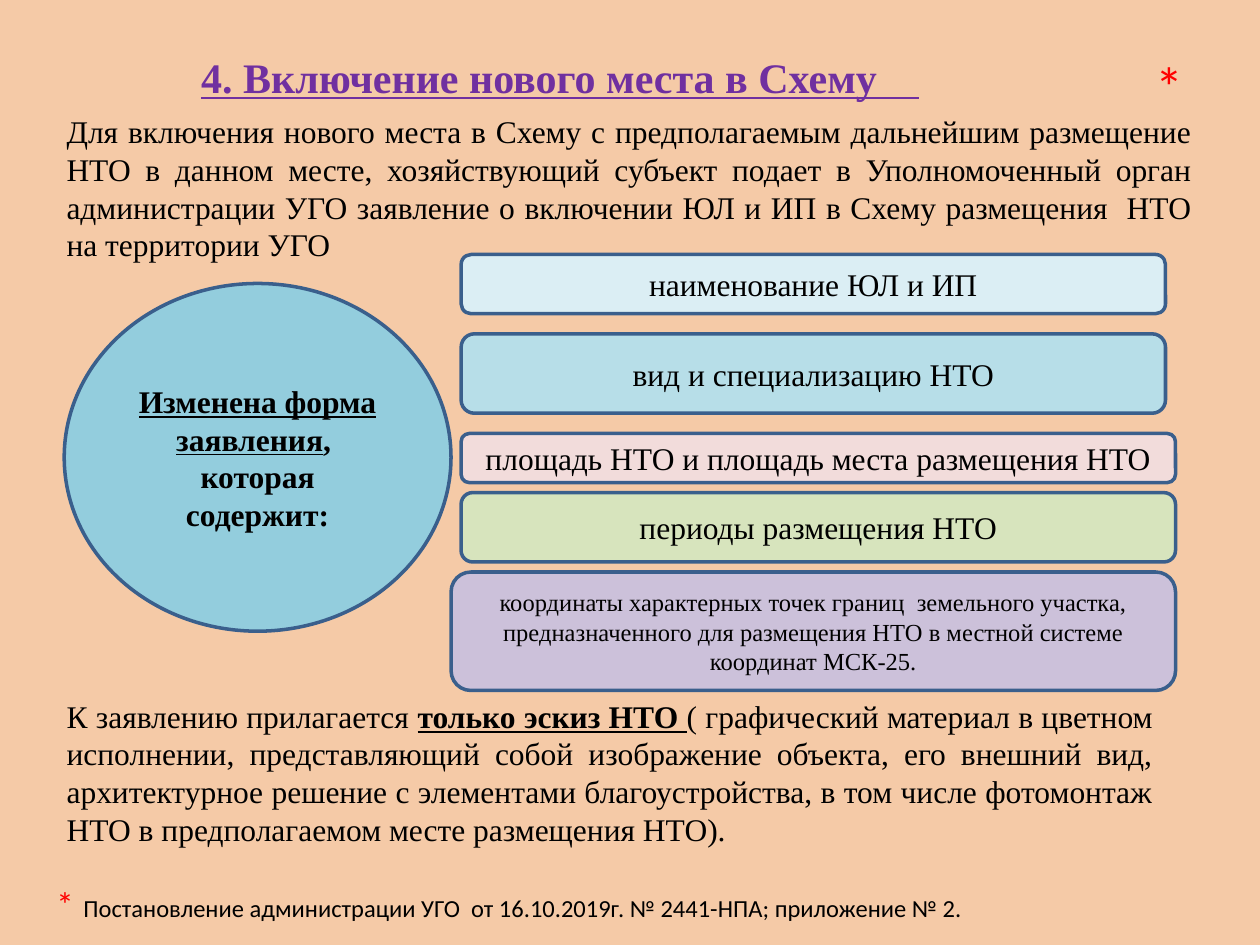
from dataclasses import dataclass

from pptx import Presentation
from pptx.dml.color import RGBColor
from pptx.enum.shapes import MSO_SHAPE
from pptx.enum.text import MSO_ANCHOR, PP_ALIGN
from pptx.util import Inches, Pt

COLORS = {
    "background": "F5CAA7", "title": "7030A0", "text": "000000",
    "star": "FF0000", "outline": "3A5F8C", "circle": "93CDDD",
    "name": "DBEEF4", "kind": "B7DEE8", "area": "F2DCDB",
    "period": "D7E4BD", "coordinates": "CCC1DA",
}
SERIF = "Times New Roman"
SANS = "Calibri"


@dataclass
class Span:
    text: str
    bold: bool = False
    underline: bool = False
    size: float | None = None
    color: str | None = None


@dataclass
class Style:
    size: float = 18
    font: str = SERIF
    color: str = "text"
    align: PP_ALIGN = PP_ALIGN.CENTER
    anchor: MSO_ANCHOR = MSO_ANCHOR.MIDDLE


@dataclass
class Item:
    text: str
    left: float
    top: float
    width: float
    height: float
    fill: str
    size: float = 18


def rgb(name: str) -> RGBColor:
    return RGBColor.from_string(COLORS[name])


def write(shape, paragraphs: list[list[Span]], style: Style) -> None:
    frame = shape.text_frame
    frame.word_wrap = True
    frame.vertical_anchor = style.anchor
    for index, spans in enumerate(paragraphs):
        para = frame.add_paragraph() if index else frame.paragraphs[0]
        para.alignment = style.align
        para.font.name = style.font
        para.font.size = Pt(style.size)
        para.font.color.rgb = rgb(style.color)
        for span in spans:
            run = para.add_run()
            run.text = span.text
            if span.bold:
                run.font.bold = True
            if span.underline:
                run.font.underline = True
            if span.size:
                run.font.size = Pt(span.size)
            if span.color:
                run.font.color.rgb = rgb(span.color)


def add_text(page, left: float, top: float, width: float, height: float,
             spans: list[Span], style: Style) -> None:
    box = page.shapes.add_textbox(Inches(left), Inches(top), Inches(width), Inches(height))
    write(box, [spans], style)


def add_figure(page, kind: MSO_SHAPE, item: Item, paragraphs: list[list[Span]]) -> None:
    shape = page.shapes.add_shape(kind, Inches(item.left), Inches(item.top),
                                  Inches(item.width), Inches(item.height))
    shape.shadow.inherit = False
    shape.fill.solid()
    shape.fill.fore_color.rgb = rgb(item.fill)
    shape.line.color.rgb = rgb("outline")
    shape.line.width = Pt(2)
    write(shape, paragraphs, Style(size=item.size))


ITEMS = [
    Item("наименование ЮЛ и ИП", 3.66, 2.02, 5.59, 0.47, "name"),
    Item("вид и специализацию НТО", 3.66, 2.65, 5.59, 0.63, "kind"),
    Item("площадь НТО и площадь места размещения НТО", 3.66, 3.44, 5.67, 0.39, "area"),
    Item("периоды размещения НТО", 3.66, 3.91, 5.67, 0.55, "period"),
    Item("координаты характерных точек границ  земельного участка, предназначенного "
         "для размещения НТО в местной системе координат МСК-25.",
         3.58, 4.54, 5.75, 0.94, "coordinates", 14),
]


def main() -> None:
    deck = Presentation()
    deck.slide_width, deck.slide_height = Inches(10), Inches(7.5)
    page = deck.slides.add_slide(deck.slide_layouts[6])
    page.background.fill.solid()
    page.background.fill.fore_color.rgb = rgb("background")

    # Title; its underline runs on past the last word
    add_text(page, 0.5, 0.3, 7.89, 0.61,
             [Span("4. Включение нового места в Схему    ", bold=True, underline=True)],
             Style(size=24, color="title"))

    # Body paragraphs above and below the diagram
    body = Style(align=PP_ALIGN.JUSTIFY, anchor=MSO_ANCHOR.TOP)
    add_text(page, 0.43, 0.84, 9.13, 1.31, [Span(
        "Для включения нового места в Схему с предполагаемым дальнейшим размещение НТО "
        "в данном месте, хозяйствующий субъект подает в Уполномоченный орган администрации "
        "УГО заявление о включении ЮЛ и ИП в Схему размещения  НТО на территории УГО")], body)
    add_text(page, 0.43, 5.48, 8.82, 1.31, [
        Span("К заявлению прилагается "),
        Span("только эскиз НТО ", bold=True, underline=True),
        Span("( графический материал в цветном исполнении, представляющий собой изображение "
             "объекта, его внешний вид, архитектурное решение с элементами благоустройства, "
             "в том числе фотомонтаж НТО в предполагаемом месте размещения НТО)."),
    ], body)

    # Circle and the contents of the application
    circle = Item("", 0.51, 2.25, 3.07, 2.76, "circle")
    add_figure(page, MSO_SHAPE.OVAL, circle, [
        [Span("Изменена форма заявления", bold=True, underline=True), Span(", ", bold=True)],
        [Span("которая содержит:", bold=True)],
    ])
    for item in ITEMS:
        add_figure(page, MSO_SHAPE.ROUNDED_RECTANGLE, item, [[Span(item.text)]])

    # Footnote mark and footnote
    add_text(page, 8.7, 0.36, 0.79, 0.64, [Span("*")],
             Style(32, SANS, "star", PP_ALIGN.RIGHT, MSO_ANCHOR.TOP))
    add_text(page, 0.35, 6.9, 8.9, 0.5, [
        Span("*", size=20, color="star"),
        Span(" ", size=24),
        Span("Постановление администрации УГО  от 16.10.2019г. № 2441-НПА; приложение № 2."),
    ], Style(14, SANS, "text", PP_ALIGN.LEFT, MSO_ANCHOR.TOP))

    deck.save("out.pptx")


if __name__ == "__main__":
    main()
